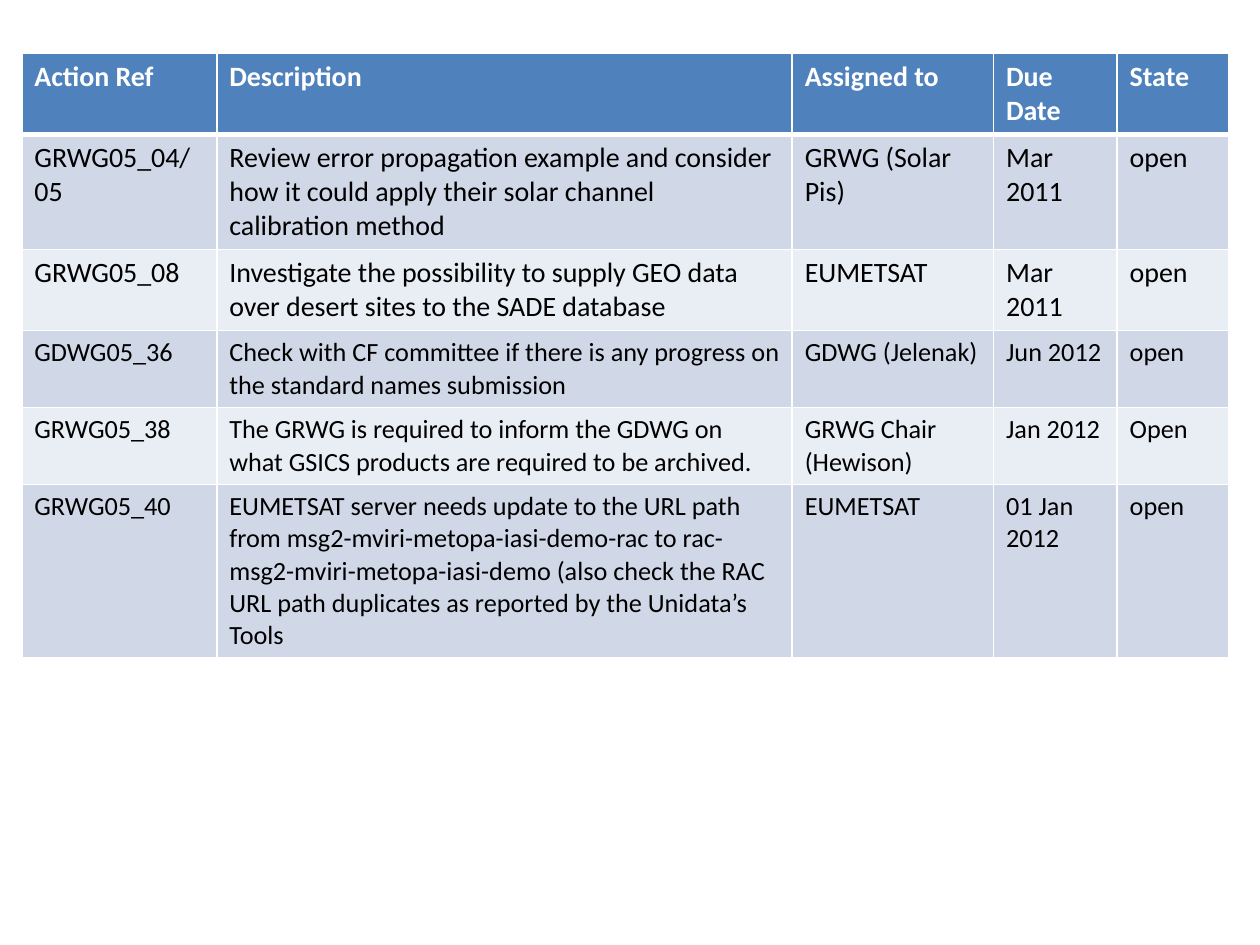
from lxml import etree
from pptx import Presentation
from pptx.dml.color import RGBColor
from pptx.oxml.ns import qn
from pptx.util import Cm, Pt

WHITE = RGBColor(0xFF, 0xFF, 0xFF)
BLACK = RGBColor(0, 0, 0)
BLUE = RGBColor(0x4F, 0x81, 0xBD)
BANDS = [RGBColor(0xE9, 0xED, 0xF4), RGBColor(0xD0, 0xD8, 0xE8)]
FONT = "Calibri"
BLANK = 6

COLS = [3.93, 11.6, 4.06, 2.49, 2.26]
ROW = 1.03
SIZES = [16, 16, 16, 15, 15, 15]
ROWS = [
    ["Action Ref", "Description", "Assigned to", "Due Date", "State"],
    ["GRWG05_04/05",
     "Review error propagation example and consider how it could apply "
     "their solar channel calibration method",
     "GRWG (Solar Pis)", "Mar 2011", "open"],
    ["GRWG05_08",
     "Investigate the possibility to supply GEO data over desert sites "
     "to the SADE database",
     "EUMETSAT", "Mar 2011", "open"],
    ["GDWG05_36",
     "Check with CF committee if there is any progress on the standard "
     "names submission",
     "GDWG (Jelenak)", "Jun 2012", "open"],
    ["GRWG05_38",
     "The GRWG is required to inform the GDWG on what GSICS products are "
     "required to be archived.",
     "GRWG Chair (Hewison)", "Jan 2012", "Open"],
    ["GRWG05_40",
     "EUMETSAT server needs update to the URL path from "
     "msg2-mviri-metopa-iasi-demo-rac to rac-msg2-mviri-metopa-iasi-demo "
     "(also check the RAC URL path duplicates as reported by the "
     "Unidata’s Tools",
     "EUMETSAT", "01 Jan 2012", "open"],
]


def put_text(frame, text, size=16, color=BLACK, bold=False):
    run = frame.paragraphs[0].add_run()
    run.text = text
    font = run.font
    font.name, font.size, font.bold = FONT, Pt(size), bold
    font.color.rgb = color


def set_edges(cell, top=1, bottom=1):
    """Draw white cell borders; call before the fill is set."""
    props = cell._tc.get_or_add_tcPr()
    for side, width in (("L", 1), ("R", 1), ("T", top), ("B", bottom)):
        line = etree.SubElement(props, qn(f"a:ln{side}"), w=str(Pt(width)))
        fill = etree.SubElement(line, qn("a:solidFill"))
        etree.SubElement(fill, qn("a:srgbClr"), val=str(WHITE))


def fill_cell(cell, color):
    cell.fill.solid()
    cell.fill.fore_color.rgb = color


def add_actions(slide):
    frame = slide.shapes.add_table(len(ROWS), len(COLS), Cm(0.44), Cm(1.07),
                                   Cm(sum(COLS)), Cm(ROW * len(ROWS)))
    table = frame.table
    for col, width in zip(table.columns, COLS):
        col.width = Cm(width)
    for r, (texts, size) in enumerate(zip(ROWS, SIZES)):
        head = r == 0
        # Rows grow from this least height to fit their text
        table.rows[r].height = Cm(ROW)
        for c, text in enumerate(texts):
            cell = table.cell(r, c)
            set_edges(cell, top=3 if r == 1 else 1, bottom=3 if head else 1)
            fill_cell(cell, BLUE if head else BANDS[r % 2])
            put_text(cell.text_frame, text, size=size, bold=head,
                     color=WHITE if head else BLACK)
    frame.height = Cm(11.99)


def main():
    deck = Presentation()
    deck.slide_width, deck.slide_height = Cm(25.4), Cm(19.05)
    slide = deck.slides.add_slide(deck.slide_layouts[BLANK])
    # Table of open actions
    add_actions(slide)
    deck.save("out.pptx")


if __name__ == "__main__":
    main()
